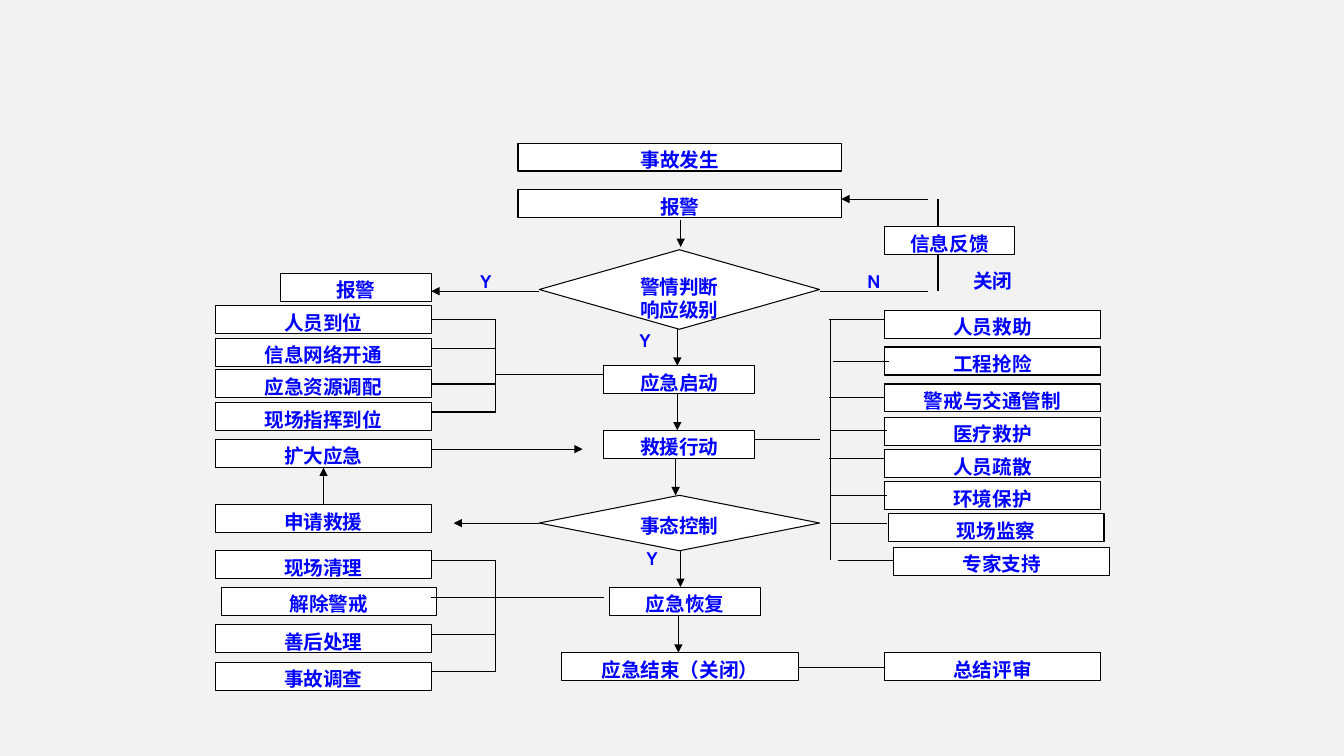
from lxml import etree
from pptx import Presentation
from pptx.dml.color import RGBColor
from pptx.enum import shapes, text
from pptx.oxml import ns
from pptx.util import Pt

BACKGROUND = RGBColor(0xF2, 0xF2, 0xF2)
WHITE = RGBColor(0xFF, 0xFF, 0xFF)
BLACK = RGBColor(0, 0, 0)
BLUE = RGBColor(0, 0, 0xFF)
FONT = "Karla"
BOX_H = 20
WIDE, SIDE, STEP = 231, 154, 108
LEFT_X, LEFT_EDGE, LEFT_BUS = 154, 308, 354.2
RIGHT_X, RIGHT_BUS, BRANCH = 632, 593.3, 40
DIAMOND_X, DIAMOND_W = 385.2, 200.2
DIAMOND_END = DIAMOND_X + DIAMOND_W

MAIN_BOXES = [
    ("事故发生", 370, 102.2, WIDE),
    ("报警", 370, 135.4, WIDE),
    ("信息反馈", RIGHT_X, 162, 92.5),
    ("报警", 200.2, 195.1, STEP),
    ("应急启动", 431.3, 261.2, STEP),
    ("救援行动", 431.3, 307.4, STEP),
    ("应急恢复", 435.4, 419.6, STEP),
    ("应急结束（关闭）", 401, 466.2, 169.5),
    ("总结评审", RIGHT_X, 466.2, SIDE),
]
LEFT_BOXES = [
    ("人员到位", 218.2, 0),
    ("信息网络开通", 241.7, 0),
    ("应急资源调配", 264.2, 0),
    ("现场指挥到位", 287.5, 0),
    ("扩大应急", 313.9, 0),
    ("申请救援", 360.4, 0),
    ("现场清理", 393.5, 0),
    ("解除警戒", 419.6, 3.9),
    ("善后处理", 446.4, 0),
    ("事故调查", 473, 0),
]
RIGHT_BOXES = [
    ("人员救助", 221.6, 0),
    ("工程抢险", 247.9, 0),
    ("警戒与交通管制", 274.3, 0),
    ("医疗救护", 298.1, 0),
    ("人员疏散", 321.1, 0),
    ("环境保护", 344, 0),
    ("现场监察", 367, 2.6),
    ("专家支持", 391, 6.5),
]
DIAMONDS = [
    ("警情判断\n响应级别", 178.4, 56.8),
    ("事态控制", 353.8, 39.6),
]
LABELS = [
    ("N", 601.2, 188.6, 46),
    ("关闭", 678.2, 188.6, 62),
    ("Y", 324, 188.6, 46),
    ("Y", 437.8, 230.6, 46),
    ("Y", 442.8, 386.6, 46),
]
LEFT_BRANCHES = [
    (228.2, 249.1, 274.3, 294.3),
    (400.2, 426.8, 453, 479.4),
]
RIGHT_BRANCHES = [
    (592, 228.2), (594.7, 258.5), (592, 283.7), (593.3, 307.4),
    (592, 327.5), (593.3, 353.8), (593.3, 373.7), (598.4, 400.2),
]
LINES = [
    (DIAMOND_END, 208, 663, 208),
    (670, 208, 670, 182),
    (670, 162, 670, 142),
    (LEFT_BUS, 267.8, 431.3, 267.8),
    (LEFT_BUS, 426.8, 431.3, 426.8),
    (539.3, 314, DIAMOND_END, 314),
    (570.5, 476.6, RIGHT_X, 476.6),
    (RIGHT_BUS, 228.2, RIGHT_BUS, 400.2),
]
ARROWS = [
    (663, 142.2, 601, 142.2),
    (DIAMOND_X, 208, LEFT_EDGE, 208),
    (486.2, 157, 486.2, 176.5),
    (483.8, 235, 483.8, 261.2),
    (483.8, 281, 483.8, 307.4),
    (482.6, 327.6, 482.6, 353.8),
    (486, 393.4, 486, 419.3),
    (484.6, 440, 484.6, 466.2),
    (LEFT_EDGE, 320.8, 416.2, 320.8),
    (DIAMOND_X, 373.7, 324, 373.7),
    (231.1, 360.4, 231.1, 334),
]


def write(sp, content):
    tf = sp.text_frame
    tf.word_wrap = True
    tf.vertical_anchor = text.MSO_ANCHOR.TOP
    tf.text = content
    for p in tf.paragraphs:
        p.alignment = text.PP_ALIGN.CENTER
        for r in p.runs:
            r.font.name = FONT
            r.font.size = Pt(14)
            r.font.bold = True
            r.font.color.rgb = BLUE


def add_node(s, kind, content, x, y, w, h):
    sp = s.shapes.add_shape(kind, Pt(x), Pt(y), Pt(w), Pt(h))
    sp.shadow.inherit = False
    sp.fill.solid()
    sp.fill.fore_color.rgb = WHITE
    sp.line.color.rgb = BLACK
    sp.line.width = Pt(0.75)
    write(sp, content)


def add_line(s, x1, y1, x2, y2, arrow=False):
    sp = s.shapes.add_connector(
        shapes.MSO_CONNECTOR.STRAIGHT, Pt(x1), Pt(y1), Pt(x2), Pt(y2))
    sp.line.color.rgb = BLACK
    sp.line.width = Pt(0.75)
    props = sp.element.spPr
    if arrow:
        line = props.find(ns.qn("a:ln"))
        etree.SubElement(line, ns.qn("a:tailEnd"), type="triangle")
    etree.SubElement(props, ns.qn("a:effectLst"))


def main():
    prs = Presentation()
    prs.slide_width, prs.slide_height = Pt(960), Pt(540)
    s = prs.slides.add_slide(prs.slide_layouts[6])
    s.background.fill.solid()
    s.background.fill.fore_color.rgb = BACKGROUND

    boxes = list(MAIN_BOXES)
    for column_x, column in ((LEFT_X, LEFT_BOXES), (RIGHT_X, RIGHT_BOXES)):
        boxes += [(name, column_x + shift, y, SIDE) for name, y, shift in column]
    for name, x, y, w in boxes:
        add_node(s, shapes.MSO_SHAPE.RECTANGLE, name, x, y, w, BOX_H)
    for name, y, h in DIAMONDS:
        add_node(s, shapes.MSO_SHAPE.DIAMOND, name, DIAMOND_X, y, DIAMOND_W, h)
    for name, x, y, w in LABELS:
        write(s.shapes.add_textbox(Pt(x), Pt(y), Pt(w), Pt(BOX_H)), name)

    lines = list(LINES)
    for levels in LEFT_BRANCHES:
        lines.append((LEFT_BUS, levels[0], LEFT_BUS, levels[-1]))
        lines += [(LEFT_EDGE, y, LEFT_BUS, y) for y in levels]
    lines += [(x, y, x + BRANCH, y) for x, y in RIGHT_BRANCHES]
    for ends in lines:
        add_line(s, *ends)
    for ends in ARROWS:
        add_line(s, *ends, arrow=True)

    prs.save("out.pptx")


if __name__ == "__main__":
    main()
